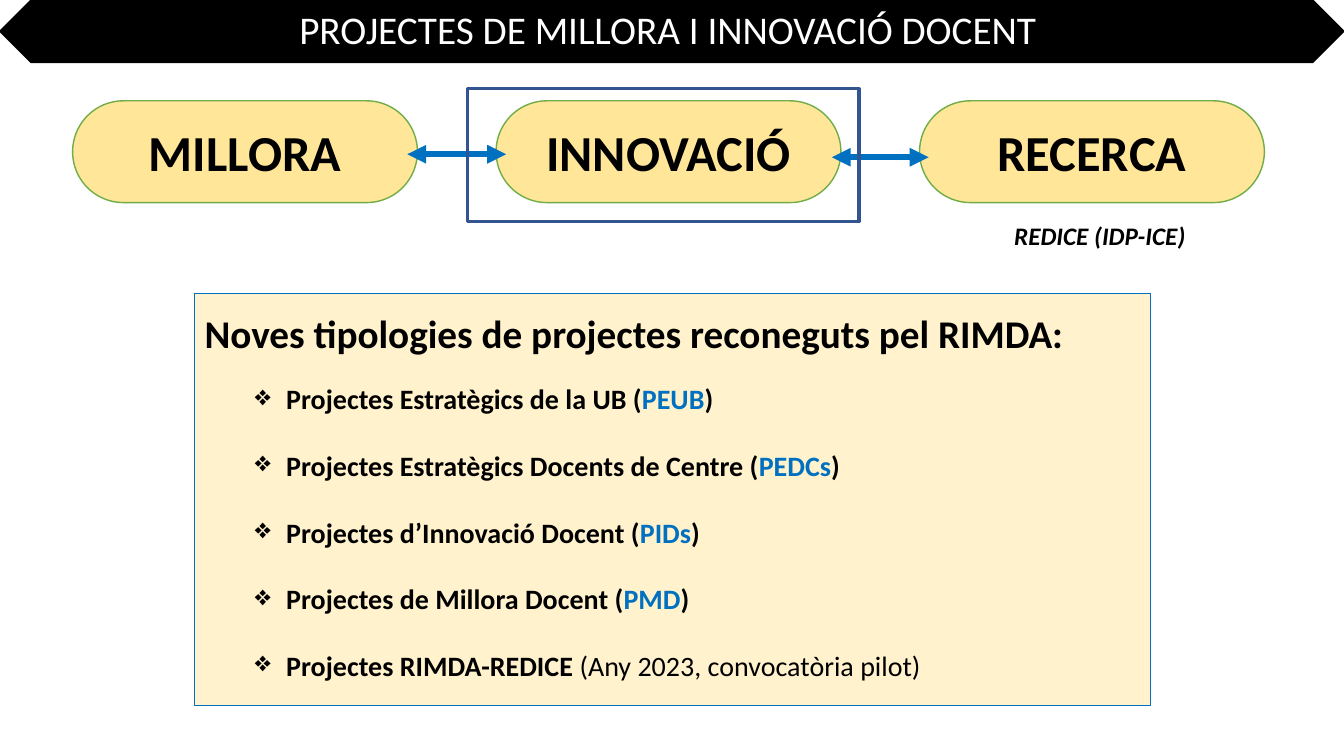
from lxml import etree
from pptx import Presentation
from pptx.dml.color import RGBColor
from pptx.enum.shapes import MSO_CONNECTOR, MSO_SHAPE
from pptx.enum.text import MSO_ANCHOR, PP_ALIGN
from pptx.oxml.ns import qn
from pptx.util import Inches, Pt

RECT = MSO_SHAPE.RECTANGLE
PILL = MSO_SHAPE.ROUNDED_RECTANGLE
SNIP = MSO_SHAPE.SNIP_2_DIAG_RECTANGLE
LINE = MSO_CONNECTOR.STRAIGHT
TOP, MID = MSO_ANCHOR.TOP, MSO_ANCHOR.MIDDLE
LEFT, CENTER = PP_ALIGN.LEFT, PP_ALIGN.CENTER

BLACK = RGBColor(0x00, 0x00, 0x00)
WHITE = RGBColor(0xFF, 0xFF, 0xFF)
GOLD = RGBColor(0xFF, 0xE6, 0x99)
CREAM = RGBColor(0xFF, 0xF2, 0xCC)
GREEN = RGBColor(0x70, 0xAD, 0x47)
BLUE = RGBColor(0x00, 0x70, 0xC0)
NAVY = RGBColor(0x32, 0x54, 0x91)

STEPS = ["MILLORA", "INNOVACIÓ", "RECERCA"]
TYPES = [
    ("Projectes Estratègics de la UB (", "PEUB"),
    ("Projectes Estratègics Docents de Centre (", "PEDCs"),
    ("Projectes d’Innovació Docent (", "PIDs"),
    ("Projectes de Millora Docent (", "PMD"),
]


class Deck:
    """Draws styled elements on the current slide."""

    font = "Calibri"

    def __init__(self):
        self.prs = Presentation()
        self.prs.slide_width = Inches(13.33)
        self.prs.slide_height = Inches(7.5)
        self.slide = self.prs.slides.add_slide(self.prs.slide_layouts[6])

    def shape(self, kind, box, fill, line, width, adjust=()):
        item = self.slide.shapes.add_shape(kind, *map(Inches, box))
        item.shadow.inherit = False
        if fill is None:
            item.fill.background()
        else:
            item.fill.solid()
            item.fill.fore_color.rgb = fill
        item.line.color.rgb = line
        item.line.width = Pt(width)
        for i, value in enumerate(adjust):
            item.adjustments[i] = value
        return item

    def words(self, para, text, size, color=BLACK, bold=True, italic=False):
        run = para.add_run()
        run.text = text
        style = {"name": self.font, "size": Pt(size), "bold": bold, "italic": italic}
        for key, value in style.items():
            setattr(run.font, key, value)
        run.font.color.rgb = color

    def label(self, box, text, size, **style):
        frame = self.slide.shapes.add_textbox(*map(Inches, box)).text_frame
        frame.word_wrap = False
        self.words(frame.paragraphs[0], text, size, **style)

    def pill(self, box, text):
        item = self.shape(PILL, box, GOLD, GREEN, 1, [0.5])
        item.text_frame.vertical_anchor = MID
        para = item.text_frame.paragraphs[0]
        para.alignment = CENTER
        self.words(para, text, 36)

    def arrow(self, left, right, y):
        item = self.slide.shapes.add_connector(
            LINE, Inches(left), Inches(y), Inches(right), Inches(y))
        item.line.color.rgb = BLUE
        item.line.width = Pt(4.5)
        props = item._element.spPr
        line = props.find(qn("a:ln"))
        for end in ("a:headEnd", "a:tailEnd"):
            etree.SubElement(line, qn(end), type="triangle")
        etree.SubElement(props, qn("a:effectLst"))

    def panel(self, box, title, rows):
        frame = self.shape(RECT, box, CREAM, BLUE, 0.75).text_frame
        form = {"word_wrap": True, "vertical_anchor": TOP, "margin_top": Inches(0.21)}
        for key, value in form.items():
            setattr(frame, key, value)
        head = frame.paragraphs[0]
        form = {"alignment": LEFT, "line_spacing": 0.9, "space_after": Pt(17.8)}
        for key, value in form.items():
            setattr(head, key, value)
        self.words(head, title, 28)
        for row in rows:
            self.bullet(frame.add_paragraph(), row)

    def bullet(self, para, parts):
        form = {"alignment": LEFT, "level": 1, "space_after": Pt(23.6)}
        for key, value in form.items():
            setattr(para, key, value)
        props = para._p.get_or_add_pPr()
        props.set("marL", str(Inches(0.81)))
        props.set("indent", str(Inches(-0.31)))
        etree.SubElement(props, qn("a:buChar"), char="❖")
        for text, style in parts:
            self.words(para, text, 20, **style)


def main():
    deck = Deck()
    deck.shape(SNIP, (0, 0, 13.33, 0.62), BLACK, BLACK, 1, [0.5, 0.5])
    deck.label((2.87, 0, 7.6, 0.88), "PROJECTES DE MILLORA I INNOVACIÓ DOCENT",
               28, color=WHITE, bold=False)
    for i, step in enumerate(STEPS):
        deck.pill((0.72 + 4.2 * i, 1, 3.42, 1.01), step)
    deck.arrow(4.04, 5.02, 1.53)
    deck.arrow(8.25, 9.21, 1.56)
    deck.shape(RECT, (4.64, 0.88, 3.88, 1.32), None, NAVY, 2.25)
    deck.label((9.96, 2.14, 1.93, 0.4), "REDICE (IDP-ICE)", 18, italic=True)
    rows = [[(name, {}), (code, {"color": BLUE}), (")", {})] for name, code in TYPES]
    rows.append([("Projectes RIMDA-REDICE ", {}),
                 ("(Any 2023, convocatòria pilot)", {"bold": False})])
    deck.panel((1.93, 2.91, 9.48, 4.09),
               "Noves tipologies de projectes reconeguts pel RIMDA:", rows)
    deck.prs.save("out.pptx")


if __name__ == "__main__":
    main()
